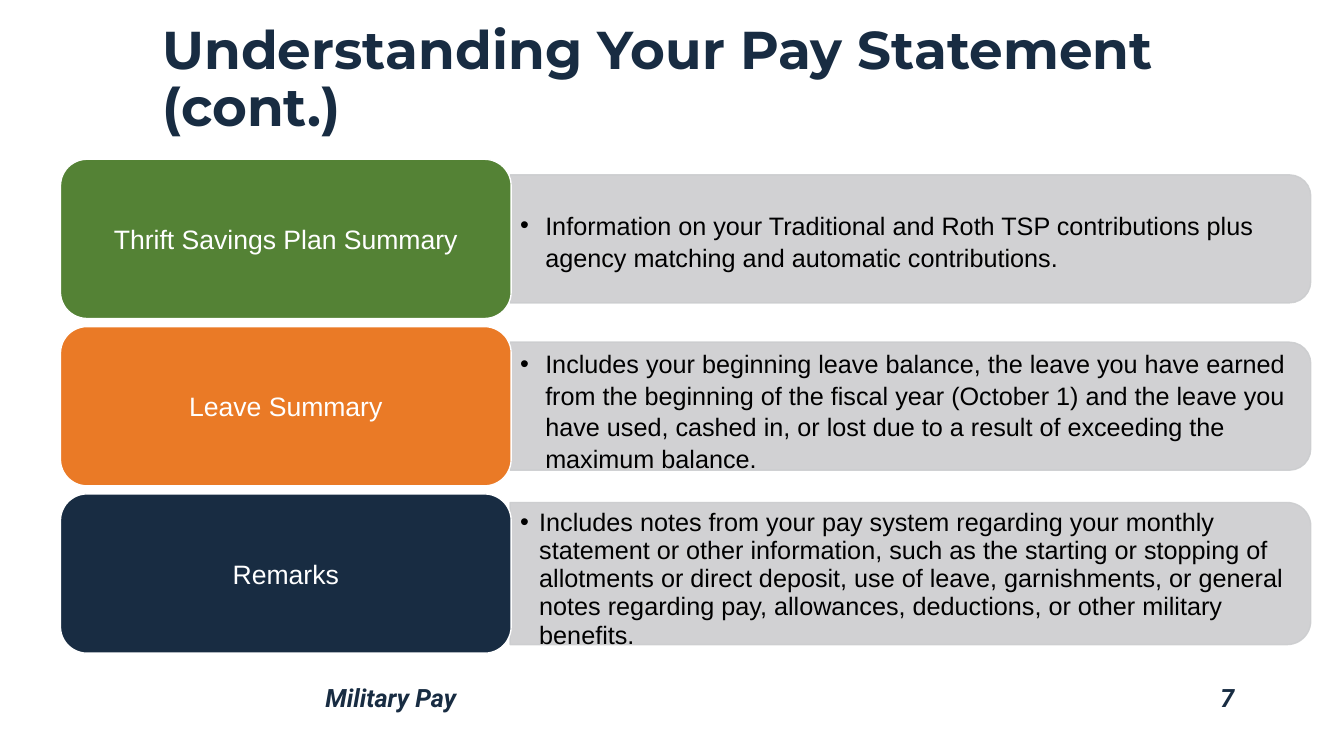
from lxml.etree import SubElement
from pptx import Presentation
from pptx.dml.color import RGBColor
from pptx.enum.shapes import MSO_SHAPE
from pptx.enum.text import MSO_ANCHOR, PP_ALIGN
from pptx.oxml.ns import qn
from pptx.util import Inches, Pt

NAVY, GRAY, WHITE, BLACK = "182C42", "CCCDCF", "FFFFFF", "000000"
CARD_LEFT, CARD_TOP, CARD_WIDTH, CARD_HEIGHT, CARD_STEP = 0.6, 1.58, 4.47, 1.58, 1.66
PANEL_LEFT, PANEL_WIDTH = 5.06, 7.94

deck = Presentation()
deck.slide_width, deck.slide_height = Inches(13.33), Inches(7.5)
page = deck.slides.add_slide(deck.slide_layouts[6])


def add_block(kind, left, top, width, height, fill, line):
    shape = page.shapes.add_shape(kind, Inches(left), Inches(top), Inches(width), Inches(height))
    shape.shadow.inherit = False
    shape.fill.solid()
    shape.fill.fore_color.rgb = RGBColor.from_string(fill)
    shape.line.color.rgb = RGBColor.from_string(line)
    shape.line.width = Pt(1)
    return shape


def add_text(text, left, top, width, height, size, color, font="Arial", spacing=0.9,
             align=PP_ALIGN.LEFT, strong=False, italic=False, indent=0):
    """Add a one-paragraph text box, bulleted when an indent in inches is given."""
    box = page.shapes.add_textbox(Inches(left), Inches(top), Inches(width), Inches(height))
    box.text_frame.word_wrap = True
    para = box.text_frame.paragraphs[0]
    para.alignment = align
    para.line_spacing = spacing
    if indent:
        properties = para._p.get_or_add_pPr()
        properties.set("marL", str(Inches(indent)))
        properties.set("indent", str(-Inches(indent)))
        SubElement(properties, qn("a:buFont")).set("typeface", "Arial")
        SubElement(properties, qn("a:buChar")).set("char", "•")
    span = para.add_run()
    span.text = text
    span.font.name = font
    span.font.size = Pt(size)
    span.font.bold = strong
    span.font.italic = italic
    span.font.color.rgb = RGBColor.from_string(color)
    return box


title = add_text("Understanding Your Pay Statement (cont.)", 1.51, 0.4, 11.73, 1.02,
                 38, NAVY, "Montserrat", strong=True)
title.text_frame.vertical_anchor = MSO_ANCHOR.BOTTOM

# label, card colour, panel height, detail top, detail height, indent, line spacing, detail
sections = [
    ("Thrift Savings Plan Summary", "548235", 1.27, 2.02, 0.73, 0.25, 1.05,
     "Information on your Traditional and Roth TSP contributions plus agency matching "
     "and automatic contributions."),
    ("Leave Summary", "EA7A26", 1.27, 3.39, 1.11, 0.25, 1.05,
     "Includes your beginning leave balance, the leave you have earned from the beginning "
     "of the fiscal year (October 1) and the leave you have used, cashed in, or lost due "
     "to a result of exceeding the maximum balance."),
    ("Remarks", NAVY, 1.41, 5, 1.11, 0.19, 0.93,
     "Includes notes from your pay system regarding your monthly statement or other "
     "information, such as the starting or stopping of allotments or direct deposit, use "
     "of leave, garnishments, or general notes regarding pay, allowances, deductions, or "
     "other military benefits."),
]

for row, (label, color, panel_height, detail_top, detail_height,
          indent, spacing, detail) in enumerate(sections):
    card_top = CARD_TOP + row * CARD_STEP
    middle = card_top + CARD_HEIGHT / 2

    # The panel is drawn upright and turned so its rounded end faces right
    panel = add_block(MSO_SHAPE.ROUND_2_SAME_RECTANGLE,
                      PANEL_LEFT + (PANEL_WIDTH - panel_height) / 2, middle - PANEL_WIDTH / 2,
                      panel_height, PANEL_WIDTH, GRAY, GRAY)
    panel.rotation = 90
    for tint in panel._element.spPr.iter(qn("a:srgbClr")):
        SubElement(tint, qn("a:alpha")).set("val", "90000")

    add_block(MSO_SHAPE.ROUNDED_RECTANGLE, CARD_LEFT, card_top,
              CARD_WIDTH, CARD_HEIGHT, color, WHITE)
    add_text(label, CARD_LEFT, card_top + 0.62, CARD_WIDTH, 0.4, 19, WHITE,
             align=PP_ALIGN.CENTER)
    add_text(detail, PANEL_LEFT, detail_top, PANEL_WIDTH, detail_height, 18, BLACK,
             spacing=spacing, indent=indent)

add_text("Military Pay", 3.13, 6.75, 7.63, 0.38, 18, NAVY, "Roboto",
         strong=True, italic=True)
add_text("7", 10.76, 6.75, 1.58, 0.38, 18, NAVY, "Roboto",
         align=PP_ALIGN.RIGHT, strong=True, italic=True)

deck.save("out.pptx")
